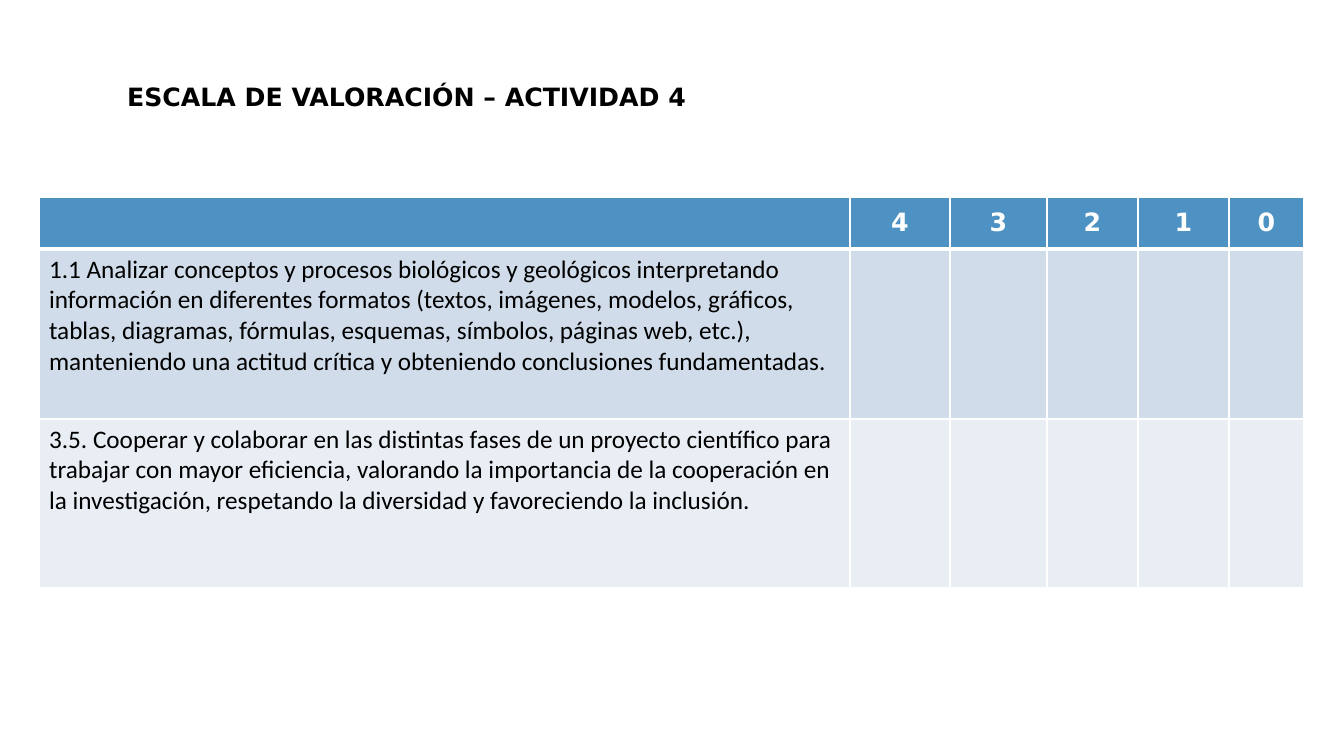
"""Build the rating-scale slide for activity 4."""
from dataclasses import dataclass

from lxml.etree import SubElement
from pptx import Presentation
from pptx.dml.color import RGBColor
from pptx.enum.text import MSO_ANCHOR, MSO_AUTO_SIZE, PP_ALIGN
from pptx.oxml.ns import qn
from pptx.util import Pt

HEADING = "ESCALA DE VALORACIÓN – ACTIVIDAD 4"
SCORES = ["4", "3", "2", "1", "0"]
CRITERIA = [
    "1.1 Analizar conceptos y procesos biológicos y geológicos interpretando "
    "información en diferentes formatos (textos, imágenes, modelos, gráficos, "
    "tablas, diagramas, fórmulas, esquemas, símbolos, páginas web, etc.), "
    "manteniendo una actitud crítica y obteniendo conclusiones fundamentadas.",
    "3.5. Cooperar y colaborar en las distintas fases de un proyecto científico "
    "para trabajar con mayor eficiencia, valorando la importancia de la "
    "cooperación en la investigación, respetando la diversidad y favoreciendo "
    "la inclusión.",
]

SLIDE_SIZE = (1344, 756)
HEADING_BOX = (117, 76, 605, 40)
SCALE_ORIGIN = (39, 197)
COLUMN_WIDTHS = [811, 100, 97, 91, 91, 75]
ROW_HEIGHTS = [52, 170, 169]


@dataclass(frozen=True)
class Theme:
    """Colours, fonts and sizes of the slide."""
    ink: str = "000000"
    paper: str = "FFFFFF"
    header: str = "4D92C3"
    bands: tuple = ("D0DCE9", "E9EEF5")
    display: str = "DejaVu Sans"
    body: str = "Calibri"
    size: int = 18
    thin: int = 1
    thick: int = 3


THEME = Theme()


def px(length):
    """Turn pixels into EMU."""
    return round(length * 914400 / 100.8)


def style_text(frame, font_name, colour, bold):
    """Format every run of a text frame."""
    for paragraph in frame.paragraphs:
        for run in paragraph.runs:
            run.font.name = font_name
            run.font.size = Pt(THEME.size)
            run.font.bold = bold
            run.font.color.rgb = RGBColor.from_string(colour)


def add_borders(cell, top, bottom):
    """Draw the four cell borders; widths are in points."""
    properties = cell._tc.get_or_add_tcPr()
    widths = {"L": THEME.thin, "R": THEME.thin, "T": top, "B": bottom}
    for side, width in widths.items():
        line = SubElement(properties, qn(f"a:ln{side}"), w=str(Pt(width)))
        fill = SubElement(line, qn("a:solidFill"))
        SubElement(fill, qn("a:srgbClr"), val=THEME.paper)


def add_heading(slide):
    """Place and format the title."""
    title = slide.shapes.title
    title.left, title.top, title.width, title.height = map(px, HEADING_BOX)
    frame = title.text_frame
    frame.text = HEADING
    frame.word_wrap = False
    frame.auto_size = MSO_AUTO_SIZE.SHAPE_TO_FIT_TEXT
    frame.vertical_anchor = MSO_ANCHOR.TOP
    frame.paragraphs[0].alignment = PP_ALIGN.LEFT
    style_text(frame, THEME.display, THEME.ink, True)


def add_scale(slide):
    """Add the table of criteria against scores."""
    content = [["", *SCORES]]
    content += [[criterion] + [""] * len(SCORES) for criterion in CRITERIA]
    extent = (sum(COLUMN_WIDTHS), sum(ROW_HEIGHTS))
    scale = slide.shapes.add_table(
        len(content), len(content[0]), *map(px, SCALE_ORIGIN + extent)).table
    for column, width in zip(scale.columns, COLUMN_WIDTHS):
        column.width = px(width)
    for row, height in zip(scale.rows, ROW_HEIGHTS):
        row.height = px(height)

    for row_index, texts in enumerate(content):
        is_header = row_index == 0
        background = (THEME.header, *THEME.bands)[row_index]
        top = THEME.thick if row_index == 1 else THEME.thin
        bottom = THEME.thick if is_header else THEME.thin
        for column_index, text in enumerate(texts):
            cell = scale.cell(row_index, column_index)
            add_borders(cell, top, bottom)
            cell.fill.solid()
            cell.fill.fore_color.rgb = RGBColor.from_string(background)
            cell.text_frame.text = text
            if is_header:
                cell.vertical_anchor = MSO_ANCHOR.MIDDLE
                cell.text_frame.paragraphs[0].alignment = PP_ALIGN.CENTER
                style_text(cell.text_frame, THEME.display, THEME.paper, True)
            else:
                style_text(cell.text_frame, THEME.body, THEME.ink, False)


def main():
    """Create and save the presentation."""
    presentation = Presentation()
    presentation.slide_width, presentation.slide_height = map(px, SLIDE_SIZE)
    slide = presentation.slides.add_slide(presentation.slide_layouts[5])
    add_scale(slide)
    add_heading(slide)
    presentation.save("out.pptx")


if __name__ == "__main__":
    main()
